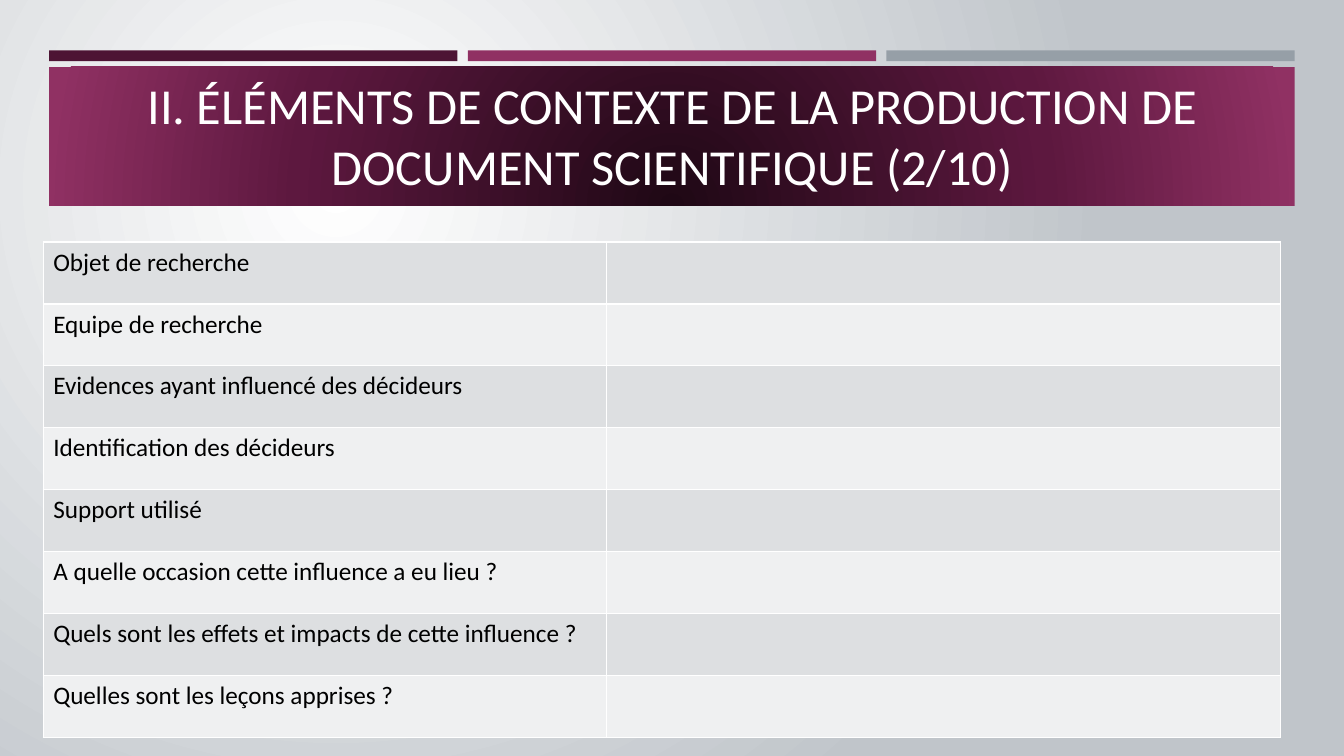
import pptx
import pptx.util
import pptx.dml.color
import pptx.enum.shapes
import pptx.enum.text
import pptx.oxml
import pptx.oxml.ns
import lxml.etree

Cm = pptx.util.Cm
Pt = pptx.util.Pt
RGBColor = pptx.dml.color.RGBColor
qn = pptx.oxml.ns.qn

WHITE = RGBColor(0xFF, 0xFF, 0xFF)
BLACK = RGBColor(0x00, 0x00, 0x00)
GREY = RGBColor(0xC0, 0xC5, 0xCA)
PLUM = RGBColor(0x4D, 0x14, 0x34)
MAGENTA = RGBColor(0x90, 0x31, 0x63)
SLATE = RGBColor(0x96, 0x9F, 0xA7)
NIGHT = RGBColor(0x1F, 0x08, 0x15)
WINE = RGBColor(0x5D, 0x18, 0x3F)
ROW_DARK = RGBColor(0xDD, 0xDF, 0xE1)
ROW_LIGHT = RGBColor(0xEF, 0xF0, 0xF1)
FONT = "Calibri"


def radial_gradient(fill, root, stops, focus):
    """Turn the fill found under root into a circular gradient."""
    fill.gradient()
    grad = root.find(".//" + qn("a:gradFill"))
    for child in list(grad):
        grad.remove(child)
    gs_lst = lxml.etree.SubElement(grad, qn("a:gsLst"))
    for pos, color in stops:
        gs = lxml.etree.SubElement(gs_lst, qn("a:gs"), pos=str(pos * 1000))
        lxml.etree.SubElement(gs, qn("a:srgbClr"), val=str(color))
    circle = lxml.etree.SubElement(grad, qn("a:path"), path="circle")
    rect = lxml.etree.SubElement(circle, qn("a:fillToRect"))
    for side, pct in zip("ltrb", focus):
        rect.set(side, str(pct * 1000))


def add_rect(left, top, width, height):
    sp = s.shapes.add_shape(pptx.enum.shapes.MSO_SHAPE.RECTANGLE,
                            Cm(left), Cm(top), Cm(width), Cm(height))
    sp.shadow.inherit = False
    sp.line.fill.background()
    return sp


prs = pptx.Presentation()
prs.slide_width = Cm(33.87)
prs.slide_height = Cm(19.05)
s = prs.slides.add_slide(prs.slide_layouts[5])

# Background
radial_gradient(s.background.fill, s.element,
                [(0, WHITE), (100, GREY)], (50, 50, 100, 100))

# Three bars along the top
for i, color in enumerate((PLUM, MAGENTA, SLATE)):
    sp = add_rect(1.24 + i * 10.55, 1.27, 10.29, 0.27)
    sp.fill.solid()
    sp.fill.fore_color.rgb = color

# Title band
band = add_rect(1.24, 1.68, 31.39, 3.51)
radial_gradient(band.fill, band.element,
                [(0, NIGHT), (60, WINE), (100, MAGENTA)], (50, 130, 50, -30))

# Title, brought in front of the band
title = s.shapes.title
title.element.getparent().append(title.element)
title.left, title.top = Cm(1.63), Cm(2.03)
title.width, title.height = Cm(30.63), Cm(2.74)
tf = title.text_frame
tf.text = "II. ÉLÉMENTS DE CONTEXTE DE LA PRODUCTION DE DOCUMENT SCIENTIFIQUE (2/10)"
tf.word_wrap = True
tf.auto_size = pptx.enum.text.MSO_AUTO_SIZE.NONE
tf.vertical_anchor = pptx.enum.text.MSO_ANCHOR.MIDDLE
p = tf.paragraphs[0]
p.alignment = pptx.enum.text.PP_ALIGN.CENTER
p.font.name = FONT
p.font.size = Pt(36)
p.font.color.rgb = WHITE

# Table of questions, with the answers left open
questions = [
    "Objet de recherche",
    "Equipe de recherche",
    "Evidences ayant influencé des décideurs",
    "Identification des décideurs",
    "Support utilisé",
    "A quelle occasion cette influence a eu lieu ?",
    "Quels sont les effets et impacts de cette influence ?",
    "Quelles sont les leçons apprises ?",
]
table = s.shapes.add_table(len(questions), 2, Cm(1.09), Cm(6.1),
                           Cm(31.17), Cm(12.48)).table
table.first_row = False
table.horz_banding = False
table.columns[0].width = Cm(14.2)
table.columns[1].width = Cm(16.97)
for i, question in enumerate(questions):
    table.rows[i].height = Cm(1.56)
    table.cell(i, 0).text = question
    for cell in table.rows[i].cells:
        p = cell.text_frame.paragraphs[0]
        p.font.name = FONT
        p.font.size = Pt(18)
        p.font.color.rgb = BLACK
        # Borders come before the fill in the cell properties
        tc_pr = cell._tc.get_or_add_tcPr()
        for side in ("a:lnL", "a:lnR", "a:lnT", "a:lnB"):
            ln = lxml.etree.SubElement(tc_pr, qn(side), w=str(Pt(1)))
            line_fill = lxml.etree.SubElement(ln, qn("a:solidFill"))
            lxml.etree.SubElement(line_fill, qn("a:srgbClr"), val=str(WHITE))
        cell.fill.solid()
        cell.fill.fore_color.rgb = ROW_LIGHT if i % 2 else ROW_DARK

prs.save("out.pptx")
